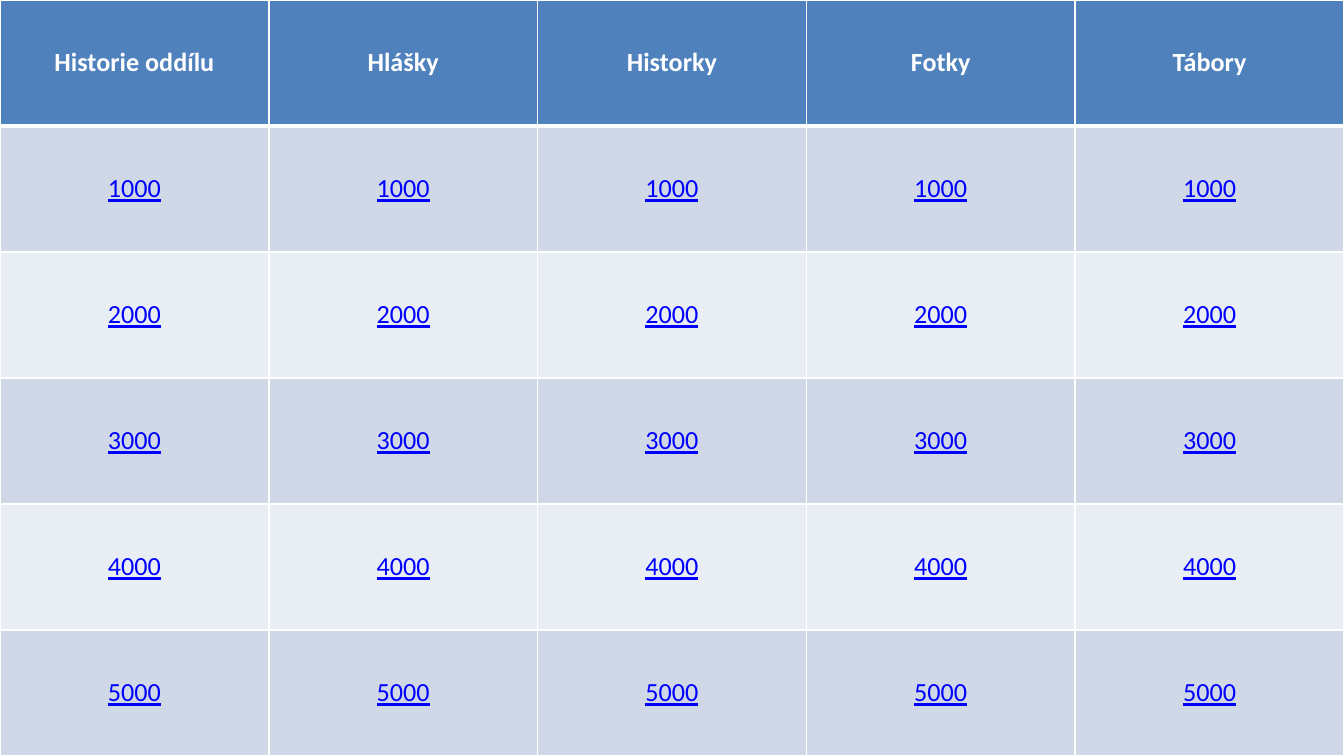
from dataclasses import dataclass

from lxml import etree
from pptx import Presentation
from pptx import util as u
from pptx.dml import color
from pptx.enum import text
from pptx.oxml import ns


@dataclass(frozen=True)
class Theme:
    font: str = "Calibri"
    size: float = 14
    header_fill: str = "4F81BD"
    header_text: str = "FFFFFF"
    band_fills: tuple = ("D0D8E8", "E9EDF4")
    points_text: str = "0000FF"
    border: str = "FFFFFF"
    thin: float = 1
    thick: float = 3


WIDTH, HEIGHT = 720, 405
CATEGORIES = ("Historie oddílu", "Hlášky", "Historky", "Fotky", "Tábory")
POINTS = range(1000, 5001, 1000)


def write_text(frame, content, *, font, size, ink, bold=False, underline=False):
    paragraph = frame.paragraphs[0]
    paragraph.alignment = text.PP_ALIGN.CENTER
    run = paragraph.add_run()
    run.text = content
    run.font.name = font
    run.font.size = u.Pt(size)
    run.font.bold = bold
    run.font.underline = underline
    run.font.color.rgb = color.RGBColor.from_string(ink)


class Board:
    def __init__(self, slide, theme):
        self.slide = slide
        self.theme = theme

    def border(self, cell, side, width):
        properties = cell._tc.get_or_add_tcPr()
        line = etree.SubElement(properties, ns.qn(f"a:ln{side}"), w=str(u.Pt(width)))
        solid = etree.SubElement(line, ns.qn("a:solidFill"))
        etree.SubElement(solid, ns.qn("a:srgbClr"), val=self.theme.border)

    def cell(self, cell, content, fill, top, bottom, **text_format):
        theme = self.theme
        widths = {"L": theme.thin, "R": theme.thin, "T": top, "B": bottom}
        for side, width in widths.items():
            self.border(cell, side, width)
        cell.fill.solid()
        cell.fill.fore_color.rgb = color.RGBColor.from_string(fill)
        cell.vertical_anchor = text.MSO_ANCHOR.MIDDLE
        cell.margin_left = cell.margin_right = u.Pt(7.2)
        cell.margin_top = cell.margin_bottom = u.Pt(2.9)
        write_text(cell.text_frame, content, font=theme.font, size=theme.size, **text_format)

    def table(self, categories, points, width, height):
        theme = self.theme
        table = self.slide.shapes.add_table(
            len(points) + 1, len(categories), 0, 0, u.Pt(width), u.Pt(height)).table
        for column, category in enumerate(categories):
            self.cell(table.cell(0, column), category, theme.header_fill,
                      theme.thin, theme.thick, ink=theme.header_text, bold=True)
            for row, value in enumerate(points, start=1):
                fill = theme.band_fills[(row - 1) % len(theme.band_fills)]
                top = theme.thick if row == 1 else theme.thin
                self.cell(table.cell(row, column), str(value), fill,
                          top, theme.thin, ink=theme.points_text, underline=True)


def main():
    presentation = Presentation()
    presentation.slide_width = u.Pt(WIDTH)
    presentation.slide_height = u.Pt(HEIGHT)
    slide = presentation.slides.add_slide(presentation.slide_layouts[6])
    Board(slide, Theme()).table(CATEGORIES, POINTS, WIDTH, HEIGHT)
    presentation.save("out.pptx")


if __name__ == "__main__":
    main()
